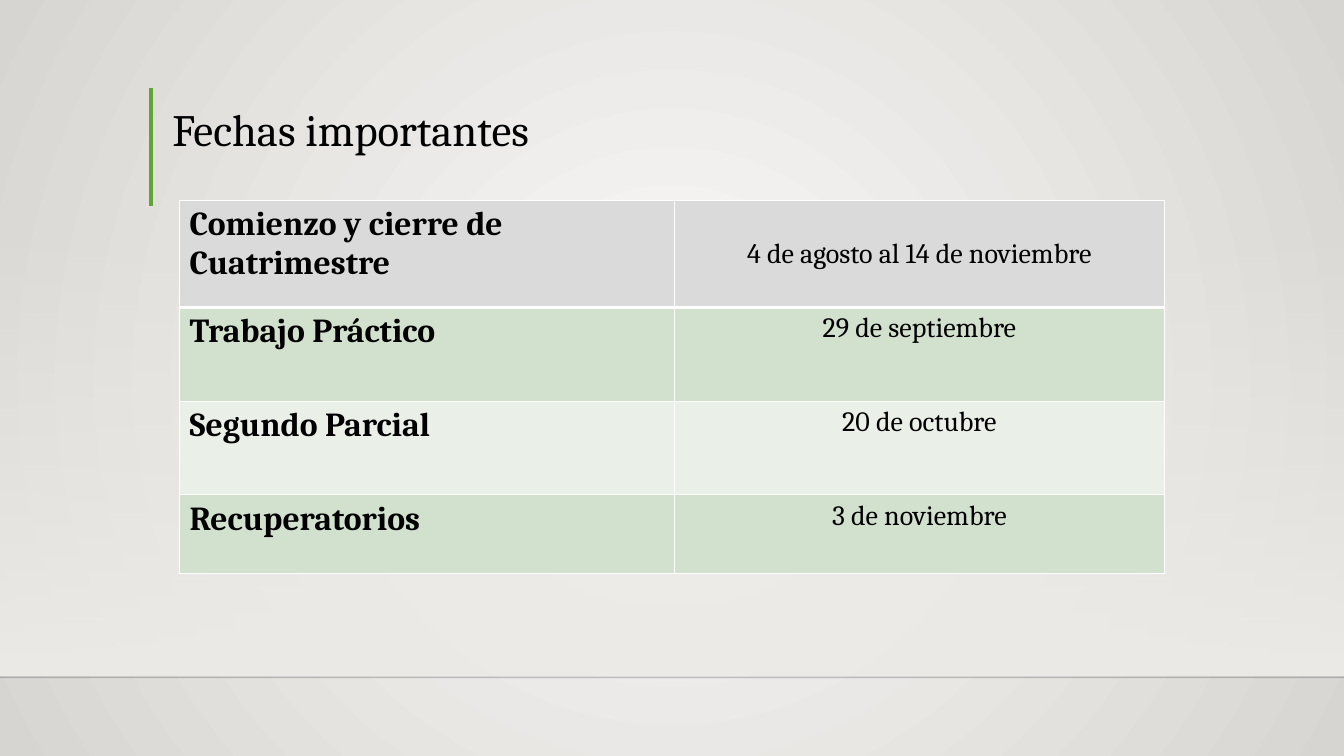
from dataclasses import dataclass

from lxml import etree
from pptx import Presentation
from pptx.dml.color import RGBColor
from pptx.enum.shapes import MSO_CONNECTOR, MSO_SHAPE
from pptx.enum.text import MSO_ANCHOR, MSO_AUTO_SIZE, PP_ALIGN
from pptx.oxml.ns import qn
from pptx.util import Inches, Pt

LINE = MSO_CONNECTOR.STRAIGHT
RECT = MSO_SHAPE.RECTANGLE
TOP, MIDDLE, BOTTOM = MSO_ANCHOR.TOP, MSO_ANCHOR.MIDDLE, MSO_ANCHOR.BOTTOM
LEFT, CENTER = PP_ALIGN.LEFT, PP_ALIGN.CENTER
NO_FIT = MSO_AUTO_SIZE.NONE
WIDTH, HEIGHT = Inches(13.33), Inches(7.5)


@dataclass(frozen=True)
class Theme:
    font: str = "Cambria"
    text: str = "000000"
    glow: str = "FAFAF9"
    edge: str = "D7D5D2"
    band: str = "EDEBE7"
    green: str = "5FA534"
    white: str = "FFFFFF"
    head: str = "DADADA"
    dark: str = "D2E1CE"
    light: str = "EAF0E8"
    title: int = 32
    label: int = 24
    date: int = 20


@dataclass(frozen=True)
class Rule:
    """A line; its ends are percent of the slide's size."""
    start: tuple[float, float]
    end: tuple[float, float]
    color: str
    weight: float
    alpha: int = 100


@dataclass(frozen=True)
class Event:
    label: str
    date: str
    height: float
    fill: str
    anchor: MSO_ANCHOR = TOP
    under: float = 1


THEME = Theme()
RULES = (
    Rule((0, 89.6), (100, 89.6), THEME.text, 1, 20),
    Rule((11.25, 11.6), (11.25, 27.2), THEME.green, 3),
)
EVENTS = (
    Event("Comienzo y cierre de Cuatrimestre", "4 de agosto al 14 de noviembre",
          14.13, THEME.head, MIDDLE, 3),
    Event("Trabajo Práctico", "29 de septiembre", 12.4, THEME.dark),
    Event("Segundo Parcial", "20 de octubre", 12.4, THEME.light),
    Event("Recuperatorios", "3 de noviembre", 10.4, THEME.dark),
)
COLS = (36.83, 36.46)


def wide(share: float) -> int:
    return round(WIDTH * share / 100)


def high(share: float) -> int:
    return round(HEIGHT * share / 100)


def rgb(code: str) -> RGBColor:
    return RGBColor.from_string(code)


def assign(target, values: dict) -> None:
    for name, value in values.items():
        setattr(target, name, value)


def fade(color, alpha: int) -> None:
    """Set the opacity, in percent, of a colour element."""
    etree.SubElement(color, qn("a:alpha")).set("val", str(alpha * 1000))


def blend(fill, first: str, last: str) -> None:
    fill.gradient()
    for stop, code in zip(fill.gradient_stops, (first, last)):
        stop.color.rgb = rgb(code)


def write(frame, text: str, size: int, bold: bool, align: PP_ALIGN) -> None:
    frame.text = text
    par = frame.paragraphs[0]
    par.alignment = align
    font = par.runs[0].font
    assign(font, {"name": THEME.font, "size": Pt(size), "bold": bold})
    font.color.rgb = rgb(THEME.text)


def paint(slide) -> None:
    """Draw the round backdrop and the band that fades in downward."""
    blend(slide.background.fill, THEME.glow, THEME.edge)
    grad = slide.element.find(".//" + qn("a:gradFill"))
    grad.remove(grad.find(qn("a:lin")))
    ring = etree.SubElement(grad, qn("a:path"), {"path": "circle"})
    etree.SubElement(ring, qn("a:fillToRect"), dict.fromkeys("ltrb", "50000"))

    band = slide.shapes.add_shape(RECT, 0, high(29.33), WIDTH, high(60))
    band.shadow.inherit = False
    band.line.fill.background()
    blend(band.fill, THEME.band, THEME.band)
    band.fill.gradient_angle = 270
    fade(band.element.find(".//" + qn("a:srgbClr")), 0)


def draw(slide, rule: Rule) -> None:
    (x1, y1), (x2, y2) = rule.start, rule.end
    line = slide.shapes.add_connector(LINE, wide(x1), high(y1), wide(x2), high(y2))
    line.line.width = Pt(rule.weight)
    line.line.color.rgb = rgb(rule.color)
    props = line.element.spPr
    if rule.alpha < 100:
        fade(props.find(".//" + qn("a:srgbClr")), rule.alpha)
    etree.SubElement(props, qn("a:effectLst"))


def head(slide, text: str) -> None:
    title = slide.shapes.title
    assign(title, {"left": wide(12.08), "top": high(6),
                   "width": wide(78.1), "height": high(15.33)})
    frame = title.text_frame
    write(frame, text, THEME.title, False, LEFT)
    assign(frame, {"vertical_anchor": BOTTOM, "word_wrap": True, "auto_size": NO_FIT})
    frame.paragraphs[0].line_spacing = 0.9


def frame_cell(cell, over: float, under: float) -> None:
    """Give a cell white borders; the side ones are one point wide."""
    props = cell._tc.get_or_add_tcPr()
    sides = {"a:lnL": 1, "a:lnR": 1, "a:lnT": over, "a:lnB": under}
    for spot, (tag, weight) in enumerate(sides.items()):
        edge = etree.Element(qn(tag), {"w": str(Pt(weight))})
        fill = etree.SubElement(edge, qn("a:solidFill"))
        etree.SubElement(fill, qn("a:srgbClr")).set("val", THEME.white)
        props.insert(spot, edge)


def chart_dates(slide, events: tuple[Event, ...]) -> None:
    """Lay out the table of events and their dates."""
    total = sum(event.height for event in events)
    table = slide.shapes.add_table(len(events), len(COLS), wide(13.35), high(26.53),
                                   wide(sum(COLS)), high(total)).table
    for col, share in zip(table.columns, COLS):
        col.width = wide(share)
    over = 1
    for row, event in zip(table.rows, events):
        row.height = high(event.height)
        label, date = row.cells
        write(label.text_frame, event.label, THEME.label, True, LEFT)
        write(date.text_frame, event.date, THEME.date, False, CENTER)
        date.vertical_anchor = event.anchor
        for cell in (label, date):
            cell.fill.solid()
            cell.fill.fore_color.rgb = rgb(event.fill)
            frame_cell(cell, over, event.under)
        over = event.under


def main() -> None:
    deck = Presentation()
    assign(deck, {"slide_width": WIDTH, "slide_height": HEIGHT})
    slide = deck.slides.add_slide(deck.slide_layouts[5])
    paint(slide)
    for rule in RULES:
        draw(slide, rule)
    head(slide, "Fechas importantes")
    chart_dates(slide, EVENTS)
    deck.save("out.pptx")


if __name__ == "__main__":
    main()
